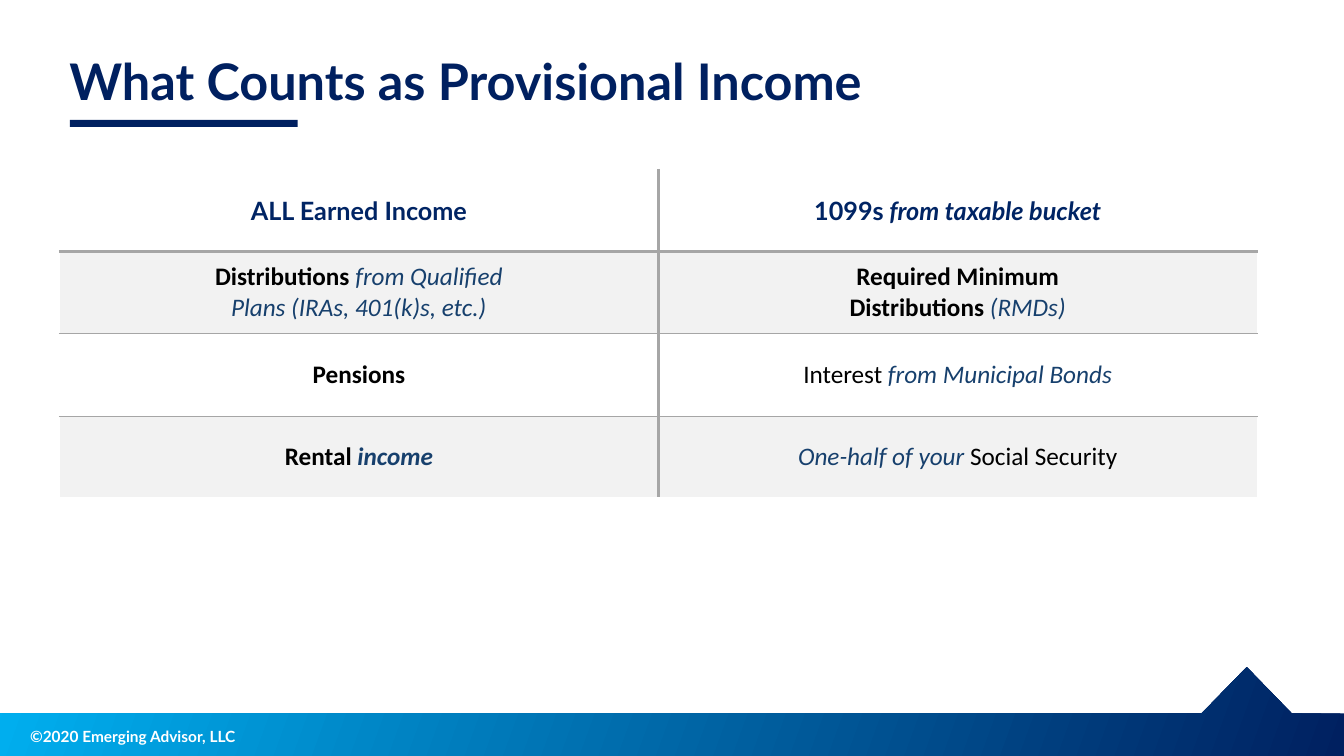
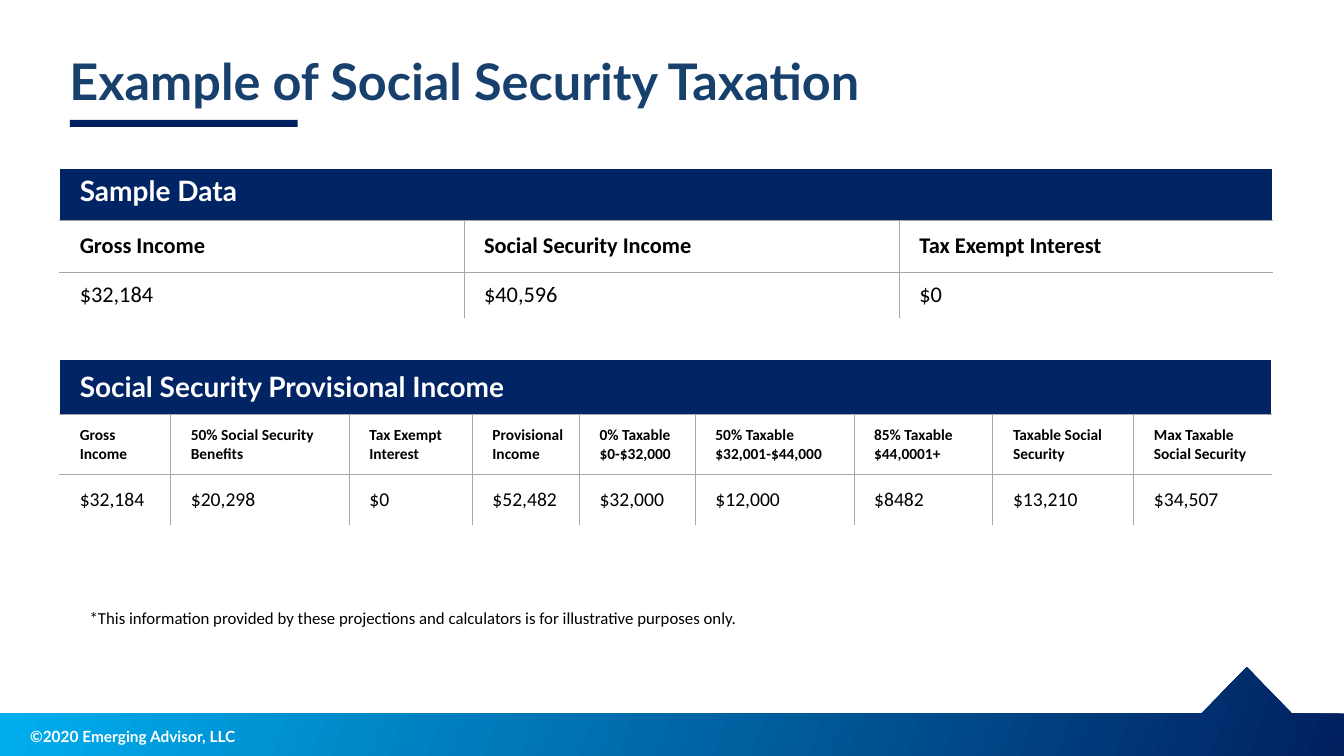
import pptx
import pptx.dml.color
import pptx.enum.shapes
import pptx.enum.text
import pptx.oxml
import pptx.oxml.ns
import pptx.util

Cm = pptx.util.Cm
Pt = pptx.util.Pt
rgb = pptx.dml.color.RGBColor.from_string
MIDDLE = pptx.enum.text.MSO_ANCHOR.MIDDLE
CENTER = pptx.enum.text.PP_ALIGN.CENTER

NAVY, HEAD, ACCENT, SKY = "002060", "002464", "17406D", "00B0F0"
WHITE, BLACK, GRAY, PALE = "FFFFFF", "000000", "A6A6A6", "F2F2F2"
OUTER = (WHITE, 1)


def write(tf, lines, name, size, color, bold=False):
    for i, line in enumerate(lines):
        p = tf.paragraphs[0] if i == 0 else tf.add_paragraph()
        p.font.name = name
        p.font.size = Pt(size)
        p.font.bold = bold
        p.font.color.rgb = rgb(color)
        p.add_run().text = line


def add_grid(s, top, widths, heights, inner=0.5, title_row=False):
    frame = s.shapes.add_table(len(heights), len(widths), Cm(1.5), Cm(top),
                               Cm(sum(widths)), Cm(sum(heights)))
    table = frame.table
    table.first_row = table.horz_banding = False
    for c, width in enumerate(widths):
        table.columns[c].width = Cm(width)
    last_r, last_c = len(heights) - 1, len(widths) - 1
    for r, height in enumerate(heights):
        table.rows[r].height = Cm(height)
        side = OUTER if title_row and r == 0 else (GRAY, inner)
        above = (GRAY, inner if r == 1 else 0.5)
        below = (GRAY, inner if r == 0 else 0.5)
        for c in range(len(widths)):
            cell = table.cell(r, c)
            cell.vertical_anchor = MIDDLE
            edges = {"lnL": side if c > 0 else OUTER,
                     "lnR": side if c < last_c else OUTER,
                     "lnT": above if r > 0 else OUTER,
                     "lnB": below if r < last_r else OUTER}
            tcPr = cell._tc.get_or_add_tcPr()
            for tag, (color, width) in edges.items():
                tcPr.append(pptx.oxml.parse_xml(
                    f'<a:{tag} {pptx.oxml.ns.nsdecls("a")} w="{Pt(width)}">'
                    f'<a:solidFill><a:srgbClr val="{color}"/></a:solidFill></a:{tag}>'))
            cell.fill.background()
    return table


prs = pptx.Presentation()
prs.slide_width, prs.slide_height = Cm(33.87), Cm(19.05)

titles = [("What Counts as Provisional Income", NAVY),
          ("Example of Social Security Taxation", ACCENT)]
for title, color in titles:
    s = prs.slides.add_slide(prs.slide_layouts[6])

    band = s.shapes.build_freeform(Cm(31.42), Cm(16.81))
    band.add_line_segments([(Cm(x), Cm(y)) for x, y in [
        (32.56, 17.98), (33.87, 17.98), (33.87, 19.05),
        (0, 19.05), (0, 17.98), (30.28, 17.98)]])
    sp = band.convert_to_shape()
    sp.shadow.inherit = False
    sp.line.fill.background()
    sp.fill.gradient()
    sp.fill.gradient_angle = 160
    for stop, stop_color in zip(sp.fill.gradient_stops, (NAVY, SKY)):
        stop.color.rgb = rgb(stop_color)

    sp = s.shapes.add_textbox(Cm(0.51), Cm(18.19), Cm(6.02), Cm(0.73))
    sp.text_frame.word_wrap = False
    write(sp.text_frame, ["©2020 Emerging Advisor, LLC"], "Lato", 11, WHITE, True)

    sp = s.shapes.add_shape(pptx.enum.shapes.MSO_SHAPE.RECTANGLE,
                            Cm(1.76), Cm(3.02), Cm(5.74), Cm(0.18))
    sp.shadow.inherit = False
    sp.line.fill.background()
    sp.fill.solid()
    sp.fill.fore_color.rgb = rgb(NAVY)

    sp = s.shapes.add_textbox(Cm(1.5), Cm(1.32), Cm(29.46), Cm(1.42))
    tf = sp.text_frame
    tf.word_wrap = True
    write(tf, [title], "Lato", 36, color, True)
    tf.paragraphs[0].line_spacing = 0.9

income_slide, example_slide = prs.slides

# b = bold, i = italic, a = accent colour
income_rows = [
    [[[("ALL Earned Income", "b")]],
     [[("1099s", "b"), (" from taxable bucket", "bi")]]],
    [[[("Distributions", "b"), (" from Qualified", "ia")],
      [("Plans (IRAs, 401(k)s, etc.)", "ia")]],
     [[("Required Minimum", "b")],
      [("Distributions ", "b"), ("(RMDs)", "ia")]]],
    [[[("Pensions", "b")]],
     [[("Interest", ""), (" from Municipal Bonds", "ia")]]],
    [[[("Rental", "b"), (" income", "bia")]],
     [[("One-half of your ", "ia"), ("Social Security", "")]]],
]
table = add_grid(income_slide, 4.27, [15.09] * 2, [2.07] * 4, inner=2.25)
for r, row in enumerate(income_rows):
    for c, lines in enumerate(row):
        cell = table.cell(r, c)
        if r % 2:
            cell.fill.solid()
            cell.fill.fore_color.rgb = rgb(PALE)
        tf = cell.text_frame
        for i, line in enumerate(lines):
            p = tf.paragraphs[0] if i == 0 else tf.add_paragraph()
            p.alignment = CENTER
            p.font.name = "Calibri" if r else "Lato"
            p.font.size = Pt(18)
            for text, style in line:
                run = p.add_run()
                run.text = text
                run.font.bold = "b" in style
                run.font.italic = "i" in style
                plain = BLACK if r else HEAD
                run.font.color.rgb = rgb(ACCENT if "a" in style else plain)

example_tables = [
    ("Sample Data", 4.25, [10.19, 10.97, 9.4], [1.3, 1.3, 1.17], 16, 16,
     ["Gross Income", "Social Security Income", "Tax Exempt Interest"],
     ["$32,184", "$40,596", "$0"]),
    ("Social Security Provisional Income", 9.05,
     [2.8, 4.5, 3.1, 2.7, 2.92, 4, 3.5, 3.55, 3.48], [1.4, 1.5, 1.3], 11, 14,
     ["Gross Income", "50% Social Security Benefits", "Tax Exempt Interest",
      "Provisional Income", "0% Taxable\n$0-$32,000",
      "50% Taxable\n$32,001-$44,000", "85% Taxable $44,0001+",
      "Taxable Social Security", "Max Taxable Social Security"],
     ["$32,184", "$20,298", "$0", "$52,482", "$32,000", "$12,000", "$8482",
      "$13,210", "$34,507"]),
]
for title, top, widths, heights, label_size, value_size, labels, values in example_tables:
    table = add_grid(example_slide, top, widths, heights, title_row=True)
    head = table.cell(0, 0)
    head.merge(table.cell(0, len(widths) - 1))
    head.margin_left = Cm(0.51)
    head.fill.solid()
    head.fill.fore_color.rgb = rgb(HEAD)
    write(head.text_frame, [title], "Lato", 20, WHITE, True)
    if title == "Sample Data":
        head.vertical_anchor = pptx.enum.text.MSO_ANCHOR.TOP
    for r, texts, size in [(1, labels, label_size), (2, values, value_size)]:
        for c, text in enumerate(texts):
            cell = table.cell(r, c)
            cell.margin_left = Cm(0.51)
            write(cell.text_frame, text.split("\n"), "Calibri", size, BLACK, r == 1)

sp = example_slide.shapes.add_textbox(Cm(2.01), Cm(15.19), Cm(17.78), Cm(0.76))
sp.text_frame.word_wrap = True
write(sp.text_frame,
      ["*This information provided by these projections and calculators "
       "is for illustrative purposes only."], "Calibri", 12, BLACK)

prs.save("out.pptx")
